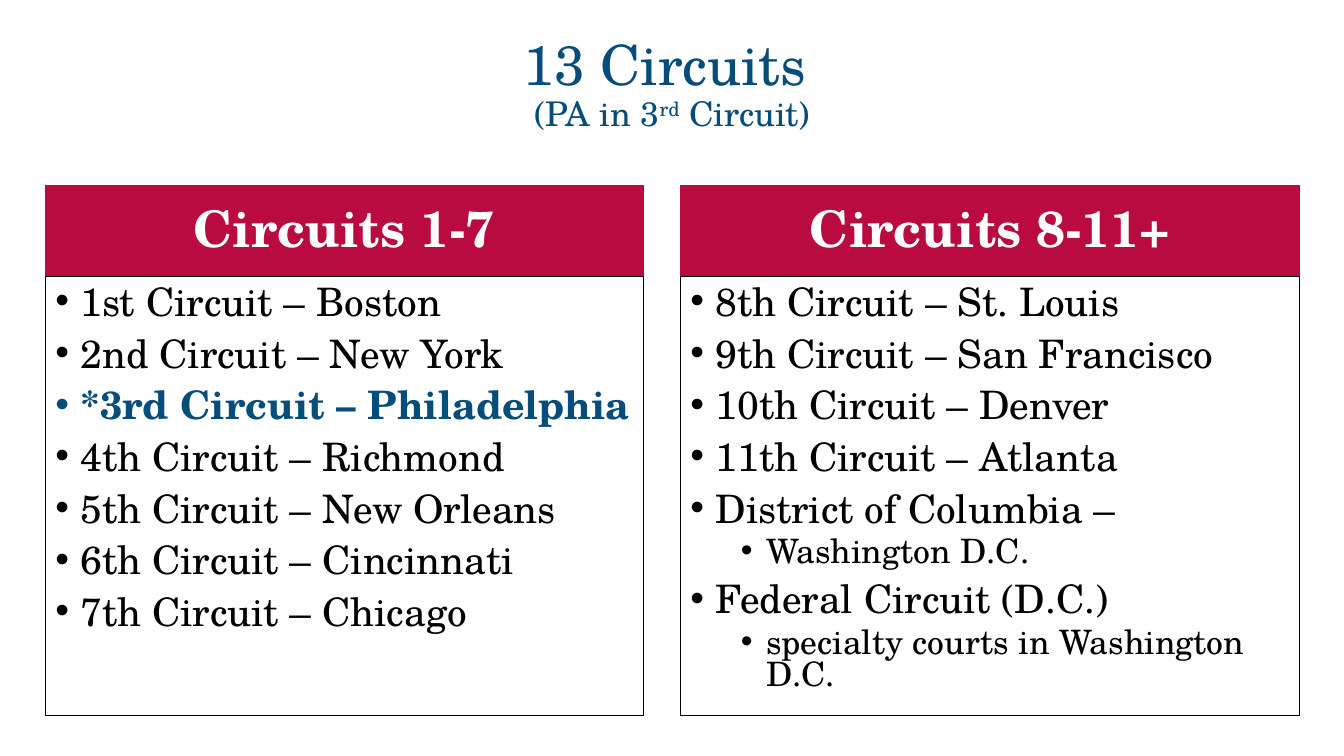
from lxml import etree
from pptx import Presentation
from pptx import util as u
from pptx.dml.color import RGBColor
from pptx.enum import shapes, text
from pptx.oxml.ns import qn

FONT = "TeX Gyre Schola"
BLUE = RGBColor(0x06, 0x4D, 0x7B)
RED = RGBColor(0xBA, 0x0B, 0x40)
WHITE = RGBColor(0xFF, 0xFF, 0xFF)
BLACK = RGBColor(0, 0, 0)

# Each entry: (text, level)
CIRCUITS_1_7 = [
    ("1st Circuit – Boston", 0),
    ("2nd Circuit – New York", 0),
    ("*3rd Circuit – Philadelphia", 0),
    ("4th Circuit – Richmond", 0),
    ("5th Circuit – New Orleans", 0),
    ("6th Circuit – Cincinnati", 0),
    ("7th Circuit – Chicago", 0),
]
CIRCUITS_8_11 = [
    ("8th Circuit – St. Louis", 0),
    ("9th Circuit – San Francisco", 0),
    ("10th Circuit – Denver", 0),
    ("11th Circuit – Atlanta", 0),
    ("District of Columbia –", 0),
    ("Washington D.C.", 1),
    ("Federal Circuit (D.C.)", 0),
    ("specialty courts in Washington D.C.", 1),
]


def add_run(p, content, size, color=BLACK, bold=False, baseline=0):
    r = p.add_run()
    r.text = content
    r.font.name = FONT
    r.font.size = u.Pt(size)
    r.font.bold = bold
    r.font.color.rgb = color
    if baseline:
        r.font._element.set("baseline", str(baseline * 1000))


def add_bullet(p, level):
    p.level = level
    p.line_spacing = 0.8
    p.space_before = u.Pt(5 if level else 10)
    pPr = p._p.get_or_add_pPr()
    pPr.set("marL", str(u.Inches(0.25 + 0.5 * level)))
    pPr.set("indent", str(u.Inches(-0.25)))
    etree.SubElement(pPr, qn("a:buFont"), typeface="Arial")
    etree.SubElement(pPr, qn("a:buChar"), char="•")


def add_box(s, left, top, width, height, line, fill=None):
    sp = s.shapes.add_shape(shapes.MSO_SHAPE.RECTANGLE, u.Inches(left),
                            u.Inches(top), u.Inches(width), u.Inches(height))
    sp.shadow.inherit = False
    if fill is None:
        sp.fill.background()
    else:
        sp.fill.solid()
        sp.fill.fore_color.rgb = fill
    sp.line.color.rgb = line
    sp.line.width = u.Pt(0.75)
    tf = sp.text_frame
    tf.word_wrap = True
    return tf


def add_title(s):
    sp = s.shapes.add_textbox(u.Inches(0.92), u.Inches(0.4),
                              u.Inches(11.5), u.Inches(0.9))
    tf = sp.text_frame
    tf.word_wrap = True
    tf.vertical_anchor = text.MSO_ANCHOR.MIDDLE
    p = tf.paragraphs[0]
    p.alignment = text.PP_ALIGN.CENTER
    p.line_spacing = 0.9
    add_run(p, "13 Circuits ", 39.6, BLUE)
    p.add_line_break()
    add_run(p, "(PA in 3", 24.3, BLUE)
    add_run(p, "rd", 24.3, BLUE, baseline=30)
    add_run(p, " Circuit)", 24.3, BLUE)


def add_column(s, left, width, heading, circuits):
    # Heading band
    tf = add_box(s, left, 1.84, width, 0.9, RED, RED)
    tf.vertical_anchor = text.MSO_ANCHOR.MIDDLE
    p = tf.paragraphs[0]
    p.alignment = text.PP_ALIGN.CENTER
    p.line_spacing = 0.9
    p.space_before = u.Pt(10)
    add_run(p, heading, 36, WHITE, bold=True)

    # Bulleted list of circuits
    tf = add_box(s, left, 2.74, width, 4.36, BLACK)
    tf.vertical_anchor = text.MSO_ANCHOR.TOP
    tf.margin_top = u.Inches(0.1)
    for i, (content, level) in enumerate(circuits):
        p = tf.add_paragraph() if i else tf.paragraphs[0]
        p.alignment = text.PP_ALIGN.LEFT
        add_bullet(p, level)
        home = content.startswith("*")
        add_run(p, content, 24 if level else 28,
                BLUE if home else BLACK, bold=home)


def main():
    prs = Presentation()
    prs.slide_width = u.Inches(13.33)
    prs.slide_height = u.Inches(7.5)
    s = prs.slides.add_slide(prs.slide_layouts[6])
    add_title(s)
    add_column(s, 0.45, 5.93, "Circuits 1-7", CIRCUITS_1_7)
    add_column(s, 6.75, 6.14, "Circuits 8-11+", CIRCUITS_8_11)
    prs.save("out.pptx")


if __name__ == "__main__":
    main()
